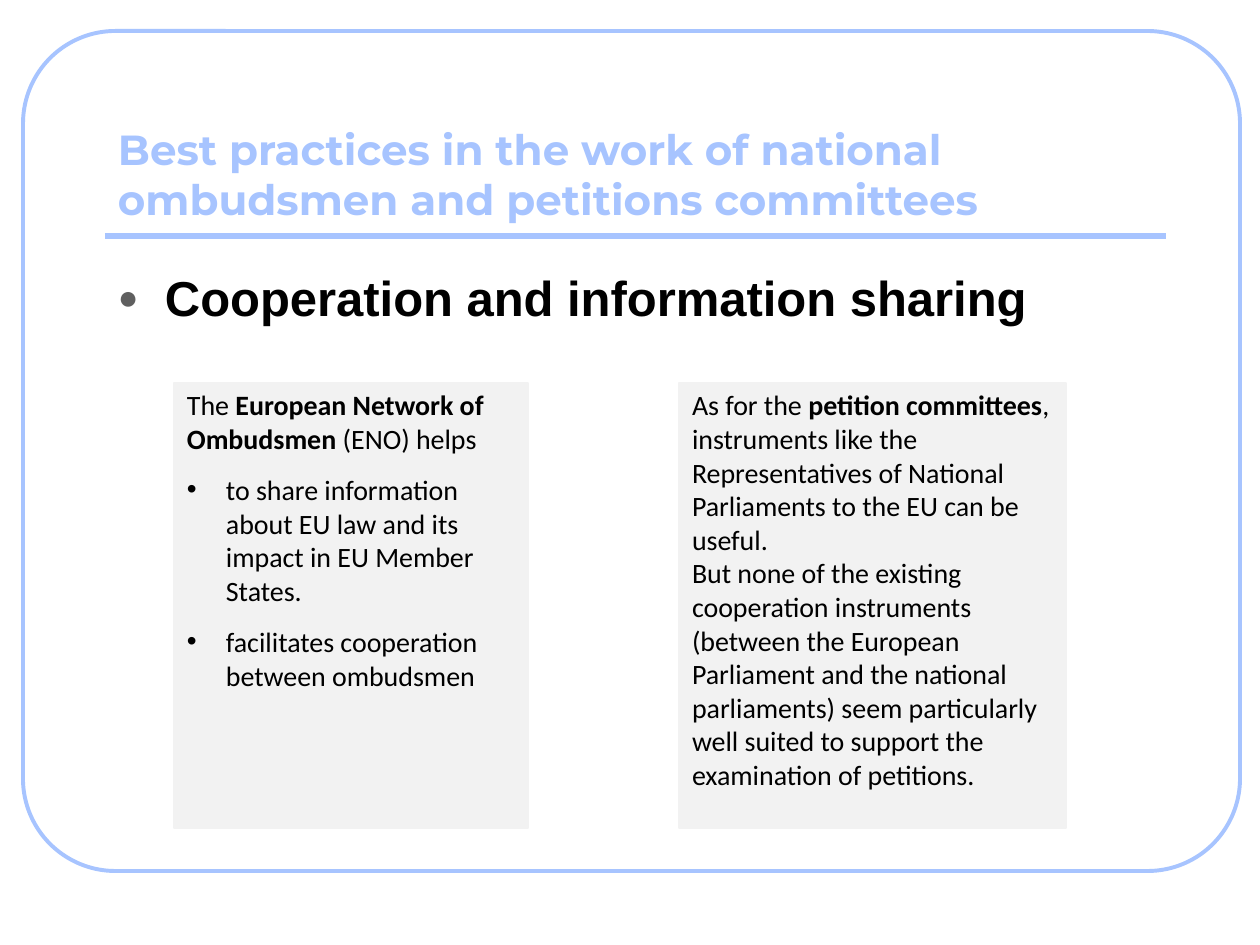
from dataclasses import dataclass

from lxml import etree
from pptx import Presentation
from pptx.dml.color import RGBColor
from pptx.enum.shapes import MSO_CONNECTOR, MSO_SHAPE
from pptx.enum.text import MSO_ANCHOR, PP_ALIGN
from pptx.oxml.ns import qn
from pptx.util import Emu, Pt

RECT, ROUNDED = MSO_SHAPE.RECTANGLE, MSO_SHAPE.ROUNDED_RECTANGLE
STRAIGHT = MSO_CONNECTOR.STRAIGHT
TOP, BOTTOM = MSO_ANCHOR.TOP, MSO_ANCHOR.BOTTOM
LEFT = PP_ALIGN.LEFT
PX = 914400 // 126


@dataclass(frozen=True)
class Theme:
    accent: str = "A7C4FF"
    panel: str = "F2F2F2"
    ink: str = "000000"
    bullet: str = "5F5F5F"
    title_font: str = "Montserrat"
    heading_font: str = "Arial"
    panel_font: str = "Calibri"
    title_size: int = 24
    heading_size: int = 28
    panel_size: int = 16


THEME = Theme()

# A paragraph is a list of (text, bold) runs.
TITLE = [[("Best practices in the work of national ombudsmen and petitions committees", True)]]
HEADING = [[("Cooperation and information sharing", True)]]
NETWORK_INTRO = [("The ", False), ("European Network of Ombudsmen", True), (" (ENO) helps", False)]
NETWORK_AIMS = [
    [("to share information about EU law and its impact in EU Member States.", False)],
    [("facilitates cooperation between ombudsmen", False)],
]
COMMITTEES = [
    [("As for the ", False), ("petition committees", True),
     (", instruments like the Representatives of National Parliaments to the EU can be useful.", False)],
    [("But none of the existing cooperation instruments (between the European Parliament and "
      "the national parliaments) seem particularly well suited to support the examination "
      "of petitions.", False)],
]

# Lengths in px: left, top, width, height
FRAME = (23, 31, 1217, 840)
CONTENT_LEFT, CONTENT_WIDTH = 105, 1061
TITLE_BOX = (CONTENT_LEFT, 73, CONTENT_WIDTH, 157)
RULE_Y = 236
HEADING_BOX = (CONTENT_LEFT, 262, CONTENT_WIDTH, 557)
PANEL_TOP, PANEL_HEIGHT = 383, 445
PANELS = [
    # left, width, paragraphs, number of plain paragraphs before the bullets, space after
    (174, 354, [NETWORK_INTRO] + NETWORK_AIMS, 1, 10),
    (679, 387, COMMITTEES, len(COMMITTEES), 0),
]
TEXT_INSETS = (13, 6, 13, 6)
PANEL_INSETS = (13, 5, 13, 20)


def px(*lengths):
    return [Emu(length * PX) for length in lengths]


def rgb(colour):
    return RGBColor.from_string(colour)


def add_bullet(paragraph, char, indent, colour=None, percent=None):
    """Hang the paragraph behind a bullet; indent is in px."""
    props = paragraph._p.get_or_add_pPr()
    props.set("marL", str(indent * PX))
    props.set("indent", str(-indent * PX))
    if colour:
        holder = etree.SubElement(props, qn("a:buClr"))
        etree.SubElement(holder, qn("a:srgbClr"), val=colour)
    if percent:
        etree.SubElement(props, qn("a:buSzPct"), val=str(percent * 1000))
    etree.SubElement(props, qn("a:buFont"), typeface="Arial")
    etree.SubElement(props, qn("a:buChar"), char=char)


def write(shape, paragraphs, *, font, size, colour, anchor=TOP, insets=TEXT_INSETS,
          before=0, after=0, bullet=None, plain=0):
    """Fill a shape with text; paragraphs from index plain on take the bullet."""
    frame = shape.text_frame
    frame.word_wrap = True
    frame.vertical_anchor = anchor
    (frame.margin_left, frame.margin_top,
     frame.margin_right, frame.margin_bottom) = px(*insets)
    for index, runs in enumerate(paragraphs):
        paragraph = frame.add_paragraph() if index else frame.paragraphs[0]
        paragraph.alignment = LEFT
        paragraph.space_before, paragraph.space_after = Pt(before), Pt(after)
        if bullet and index >= plain:
            add_bullet(paragraph, **bullet)
        for text, bold in runs:
            run = paragraph.add_run()
            run.text = text
            run.font.name, run.font.size, run.font.bold = font, Pt(size), bold
            run.font.color.rgb = rgb(colour)


def add_box(slide, preset, box, *, line, weight, fill=None):
    shape = slide.shapes.add_shape(preset, *px(*box))
    shape.shadow.inherit = False
    if fill:
        shape.fill.solid()
        shape.fill.fore_color.rgb = rgb(fill)
    else:
        shape.fill.background()
    shape.line.color.rgb = rgb(line)
    shape.line.width = Pt(weight)
    return shape


def add_rule(slide, left, y, width):
    rule = slide.shapes.add_connector(STRAIGHT, *px(left, y, left + width, y))
    rule.line.color.rgb = rgb(THEME.accent)
    rule.line.width = Pt(3)
    etree.SubElement(rule._element.spPr, qn("a:effectLst"))


def main():
    deck = Presentation()
    deck.slide_width, deck.slide_height = px(1260, 945)
    slide = deck.slides.add_slide(deck.slide_layouts[6])

    frame = add_box(slide, ROUNDED, FRAME, line=THEME.accent, weight=2.25)
    frame.adjustments[0] = 0.11
    add_rule(slide, CONTENT_LEFT, RULE_Y, CONTENT_WIDTH)

    write(slide.shapes.add_textbox(*px(*TITLE_BOX)), TITLE, font=THEME.title_font,
          size=THEME.title_size, colour=THEME.accent, anchor=BOTTOM)
    write(slide.shapes.add_textbox(*px(*HEADING_BOX)), HEADING, font=THEME.heading_font,
          size=THEME.heading_size, colour=THEME.ink, before=3,
          bullet=dict(char="●", indent=47, colour=THEME.bullet, percent=70))

    for left, width, paragraphs, plain, after in PANELS:
        panel = add_box(slide, RECT, (left, PANEL_TOP, width, PANEL_HEIGHT),
                        line=THEME.panel, weight=0.75, fill=THEME.panel)
        write(panel, paragraphs, font=THEME.panel_font, size=THEME.panel_size,
              colour=THEME.ink, insets=PANEL_INSETS, after=after, plain=plain,
              bullet=dict(char="•", indent=39))

    deck.save("out.pptx")


if __name__ == "__main__":
    main()
